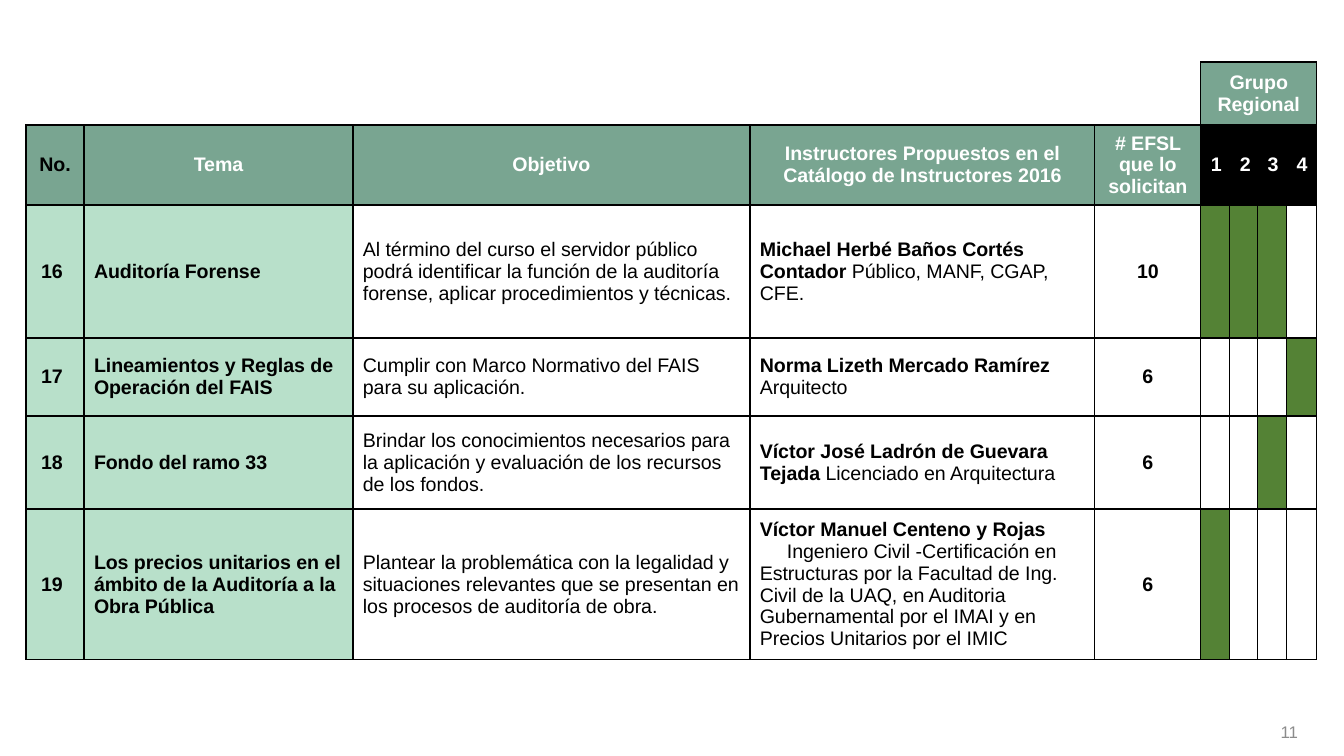
from itertools import product

from lxml.etree import SubElement
from pptx import Presentation
from pptx.dml.color import RGBColor
from pptx.enum.text import MSO_ANCHOR, PP_ALIGN
from pptx.oxml.ns import qn
from pptx.util import Emu, Pt

SCALE = 914400 / 201.5
COLORS = {
    "header": "79A591",
    "topic": "B8E0CA",
    "group": "548235",
    "black": "000000",
    "white": "FFFFFF",
    "number": "8C8C8C",
}
FONT = "Arial"
NO_STYLE = "{2D5ABB26-0587-4C30-8999-92F81FD0307C}"
COLUMN_WIDTHS = [58, 269, 397, 345, 106, 29, 28, 29, 30]
ROW_HEIGHTS = [63, 80, 133, 78, 93, 151]
FIRST_GROUP = 5
HEADERS = [
    "No.", "Tema", "Objetivo",
    "Instructores Propuestos en el Catálogo de Instructores 2016",
    "# EFSL que lo solicitan", "1", "2", "3", "4",
]
# Number, topic, objective, instructor, credentials, credential indent
# (None keeps them on the name's line), requests, regional groups
COURSES = [
    ("16", "Auditoría Forense",
     "Al término del curso el servidor público podrá identificar la función "
     "de la auditoría forense, aplicar procedimientos y técnicas.",
     "Michael Herbé Baños Cortés Contador", "Público, MANF, CGAP, CFE.", None,
     "10", {1, 2, 3}),
    ("17", "Lineamientos y Reglas de Operación del FAIS",
     "Cumplir con Marco Normativo del FAIS para su aplicación.",
     "Norma Lizeth Mercado Ramírez", "Arquitecto", 0,
     "6", {4}),
    ("18", "Fondo del ramo 33",
     "Brindar los conocimientos necesarios para la aplicación y evaluación "
     "de los recursos de los fondos.",
     "Víctor José Ladrón de Guevara Tejada", "Licenciado en Arquitectura", None,
     "6", {3}),
    ("19", "Los precios unitarios en el ámbito de la Auditoría a la Obra Pública",
     "Plantear la problemática con la legalidad y situaciones relevantes que "
     "se presentan en los procesos de auditoría de obra.",
     "Víctor Manuel Centeno y Rojas",
     "Ingeniero Civil -Certificación en Estructuras por la Facultad de Ing. "
     "Civil de la UAQ, en Auditoria Gubernamental por el IMAI y en Precios "
     "Unitarios por el IMIC", 27,
     "6", {1}),
]


def px(length):
    return Emu(round(length * SCALE))


def color(name):
    return RGBColor.from_string(COLORS[name])


def format_paragraph(paragraph, size=7, bold=None, font_color="black",
                     align=PP_ALIGN.LEFT):
    paragraph.alignment = align
    paragraph.font.name = FONT
    paragraph.font.size = Pt(size)
    paragraph.font.bold = bold
    paragraph.font.color.rgb = color(font_color)


def set_borders(cell, sides):
    properties = cell._tc.get_or_add_tcPr()
    for side in "LRTB":
        line = SubElement(properties, qn(f"a:ln{side}"), w=str(Pt(0.5)))
        if side in sides:
            fill = SubElement(line, qn("a:solidFill"))
            SubElement(fill, qn("a:srgbClr"), val=COLORS["black"])
        else:
            SubElement(line, qn("a:noFill"))


def fill_cell(cell, name):
    cell.fill.solid()
    cell.fill.fore_color.rgb = color(name)


def write_cell(cell, text, **formatting):
    paragraph = cell.text_frame.paragraphs[0]
    paragraph.text = text
    format_paragraph(paragraph, **formatting)


def write_instructor(cell, name, credentials, indent):
    paragraph = cell.text_frame.paragraphs[0]
    format_paragraph(paragraph)
    name_run = paragraph.add_run()
    name_run.text = name
    name_run.font.bold = True
    if indent is None:
        name_run.text += " "
    else:
        paragraph = cell.text_frame.add_paragraph()
        paragraph._p.get_or_add_pPr().set("indent", str(px(indent)))
        format_paragraph(paragraph)
    credentials_run = paragraph.add_run()
    credentials_run.text = credentials
    credentials_run.font.bold = False


def add_course_table(slide):
    frame = slide.shapes.add_table(
        len(ROW_HEIGHTS), len(COLUMN_WIDTHS), px(26), px(62),
        px(sum(COLUMN_WIDTHS)), px(sum(ROW_HEIGHTS)))
    table = frame.table
    table.first_row = table.horz_banding = False
    next(frame.element.iter(qn("a:tableStyleId"))).text = NO_STYLE
    for column, width in zip(table.columns, COLUMN_WIDTHS):
        column.width = px(width)
    for row, height in zip(table.rows, ROW_HEIGHTS):
        row.height = px(height)

    # Shared cell layout and borders
    for row, column in product(range(len(ROW_HEIGHTS)), range(len(COLUMN_WIDTHS))):
        cell = table.cell(row, column)
        cell.margin_left = cell.margin_right = px(10)
        cell.margin_top = cell.margin_bottom = px(6)
        cell.vertical_anchor = MSO_ANCHOR.MIDDLE
        format_paragraph(cell.text_frame.paragraphs[0])
        if row > 0 or column >= FIRST_GROUP:
            set_borders(cell, "LRTB")
        else:
            set_borders(cell, "RB" if column == FIRST_GROUP - 1 else "B")
    return table


def fill_headers(table):
    group_title = table.cell(0, FIRST_GROUP)
    group_title.merge(table.cell(0, len(HEADERS) - 1))
    fill_cell(group_title, "header")
    write_cell(group_title, "Grupo Regional", bold=True, font_color="white",
               align=PP_ALIGN.CENTER)
    for column, header in enumerate(HEADERS):
        cell = table.cell(1, column)
        fill_cell(cell, "header" if column < FIRST_GROUP else "black")
        write_cell(cell, header, bold=True, align=PP_ALIGN.CENTER,
                   font_color="white" if column else "black")


def fill_course(table, row, course):
    number, topic, objective, name, credentials, indent, requests, groups = course
    cells = [table.cell(row, column) for column in range(len(COLUMN_WIDTHS))]
    cells[0].margin_left = px(15)
    for cell, text in zip(cells, (number, topic)):
        fill_cell(cell, "topic")
        write_cell(cell, text, bold=True)
    write_cell(cells[2], objective)
    write_instructor(cells[3], name, credentials, indent)
    write_cell(cells[4], requests, bold=True, align=PP_ALIGN.CENTER)
    for group in groups:
        fill_cell(cells[FIRST_GROUP + group - 1], "group")


def add_page_number(slide, text):
    box = slide.shapes.add_textbox(px(1016), px(712), px(302), px(40))
    frame = box.text_frame
    frame.word_wrap = True
    frame.vertical_anchor = MSO_ANCHOR.MIDDLE
    frame.margin_left = frame.margin_right = px(20)
    frame.margin_top = frame.margin_bottom = 0
    frame.text = text
    format_paragraph(frame.paragraphs[0], size=6, font_color="number",
                     align=PP_ALIGN.RIGHT)


def main():
    presentation = Presentation()
    presentation.slide_width = px(1344)
    presentation.slide_height = px(756)
    slide = presentation.slides.add_slide(presentation.slide_layouts[6])

    # Course table
    table = add_course_table(slide)
    fill_headers(table)
    for row, course in enumerate(COURSES, start=2):
        fill_course(table, row, course)

    # Page number
    add_page_number(slide, "11")
    presentation.save("out.pptx")


if __name__ == "__main__":
    main()
